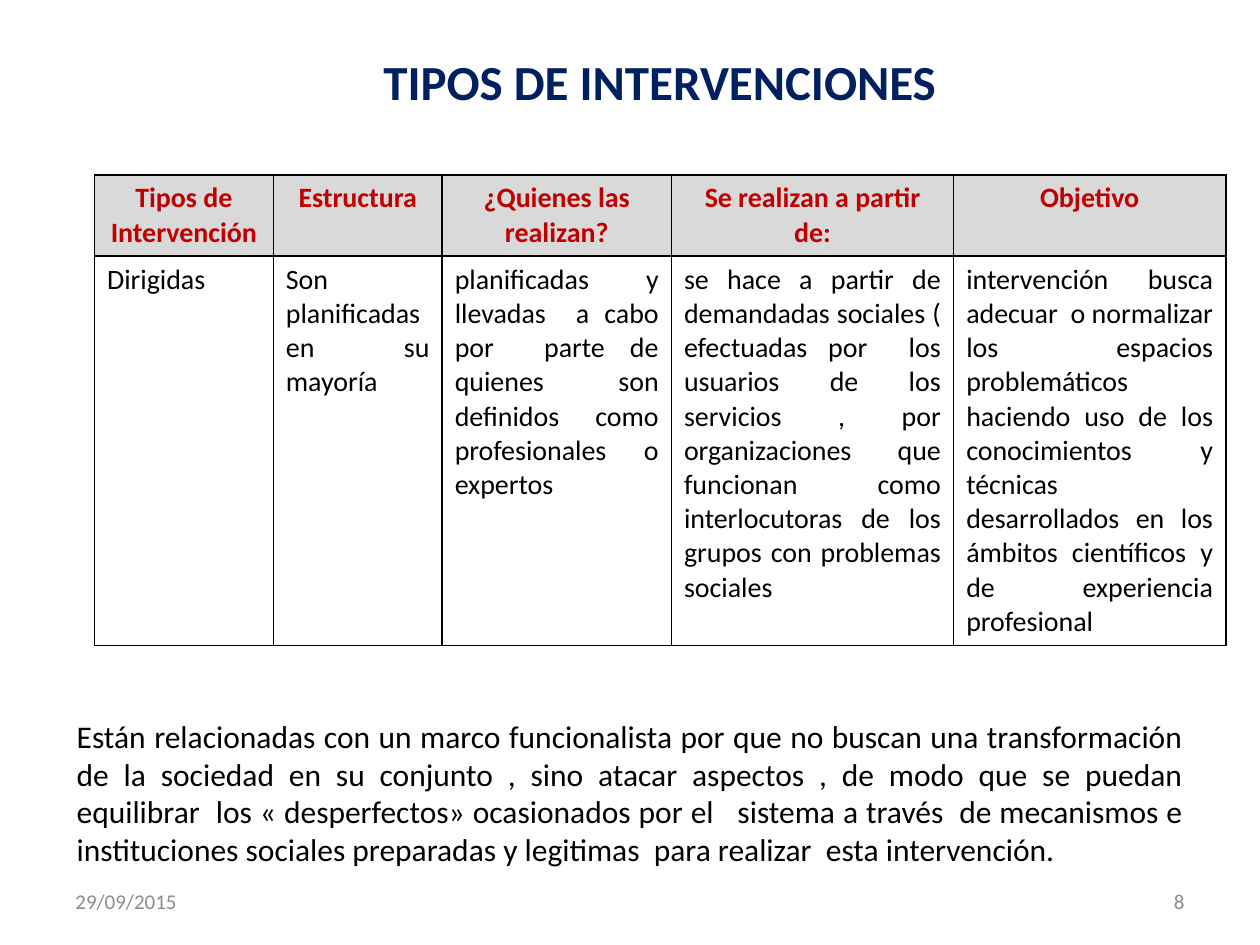
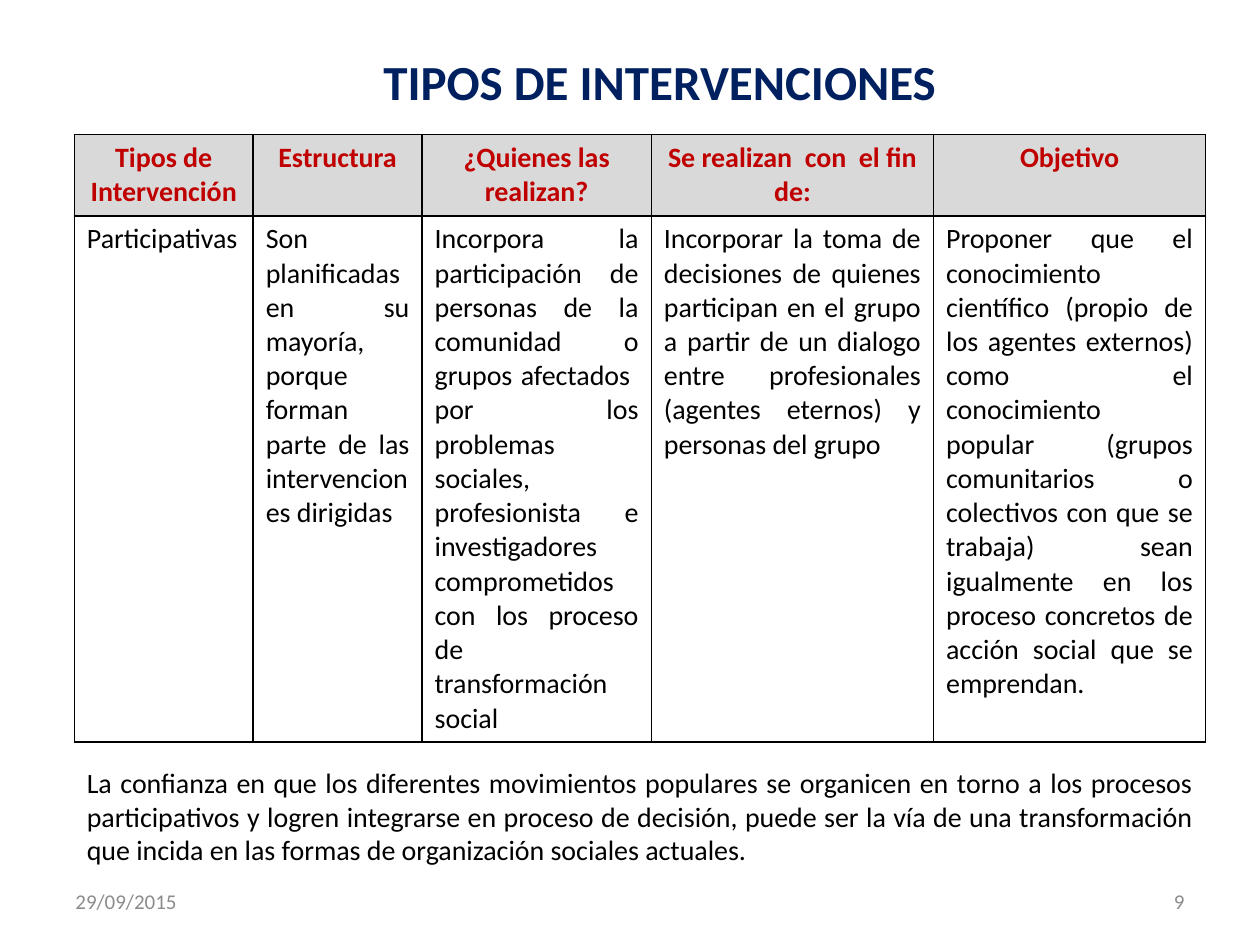
from lxml.etree import SubElement
from pptx import Presentation
from pptx.dml.color import RGBColor
from pptx.enum.text import MSO_ANCHOR, MSO_AUTO_SIZE, PP_ALIGN
from pptx.oxml.ns import qn
from pptx.util import Pt

FONT = "Calibri"
NAVY = RGBColor(0x00, 0x20, 0x60)
RED = RGBColor(0xC0, 0x00, 0x00)
BLACK = RGBColor(0x00, 0x00, 0x00)
FOOTER_GREY = RGBColor(0x8C, 0x8C, 0x8C)
HEADER_GREY = RGBColor(0xD9, 0xD9, 0xD9)

TITLE_ONLY = 5
COLUMN_WIDTHS = (102.2, 96.5, 131, 161.3, 155.5)
HEADER_HEIGHT = 46

# Content that differs from slide to slide
SLIDES = [
    {
        "number": 8,
        "table_at": (54, 100),
        "row_height": 222.5,
        "purpose": "Se realizan a partir de:",
        "row": (
            "Dirigidas",
            "Son planificadas en su mayoría",
            "planificadas y llevadas  a cabo por  parte de quienes son definidos "
            "como profesionales o expertos",
            "se hace a partir de demandadas sociales ( efectuadas por  los usuarios "
            "de los servicios , por organizaciones  que funcionan como "
            "interlocutoras de los grupos con problemas sociales",
            "intervención busca adecuar  o normalizar los espacios problemáticos "
            "haciendo uso de los conocimientos y técnicas desarrollados en los "
            "ámbitos científicos y de experiencia profesional",
        ),
        "note": "Están relacionadas con un marco funcionalista por que no buscan una "
                "transformación de la sociedad en su conjunto , sino atacar aspectos , "
                "de modo que se puedan equilibrar  los « desperfectos» ocasionados por "
                "el   sistema a través  de mecanismos e instituciones sociales "
                "preparadas y legitimas  para realizar  esta intervención.",
        "note_at": (36.7, 406, 646.5, 94.3),
        "note_size": 18,
    },
    {
        "number": 9,
        "table_at": (42.5, 77),
        "row_height": 300.5,
        "purpose": "Se realizan  con  el fin de:",
        "row": (
            "Participativas",
            "Son planificadas en su mayoría, porque forman parte de las "
            "intervenciones dirigidas",
            "Incorpora la participación de personas de la comunidad o grupos "
            "afectados  por los problemas sociales, profesionista e investigadores "
            "comprometidos con los proceso de transformación social",
            "Incorporar la toma de decisiones de quienes participan en el grupo a "
            "partir de un dialogo entre profesionales (agentes eternos) y personas "
            "del grupo",
            "Proponer que el conocimiento científico (propio de los agentes "
            "externos) como el conocimiento popular (grupos comunitarios o "
            "colectivos con que se trabaja) sean igualmente en los proceso "
            "concretos de acción social que se emprendan.",
        ),
        "note": "La confianza en que los diferentes movimientos populares se organicen "
                "en torno a los procesos participativos y logren integrarse en proceso "
                "de decisión, puede ser la vía de una transformación que incida en las "
                "formas de organización sociales actuales.",
        "note_at": (42.5, 434, 646.5, 65.5),
        "note_size": 16,
    },
]


class SlideBuilder:
    """Holds the deck, its style and the current page."""

    def __init__(self):
        self.deck = Presentation()
        self.deck.slide_width, self.deck.slide_height = Pt(720), Pt(540)
        self.page = None

    def new_page(self):
        self.page = self.deck.slides.add_slide(self.deck.slide_layouts[TITLE_ONLY])

    def fill_text(self, frame, text, size, color, align, bold=False):
        frame.word_wrap = True
        para = frame.paragraphs[0]
        para.text = text
        para.alignment = align
        para.font.name = FONT
        para.font.size = Pt(size)
        para.font.bold = bold
        para.font.color.rgb = color

    def title(self, text):
        box = self.page.shapes.title
        box.left, box.top, box.width, box.height = Pt(184.3), Pt(26), Pt(385.2), Pt(41)
        box.text_frame.auto_size = MSO_AUTO_SIZE.NONE
        self.fill_text(box.text_frame, text, 28, NAVY, PP_ALIGN.CENTER, bold=True)

    def text(self, content, at, size, color, align, anchor=MSO_ANCHOR.TOP):
        box = self.page.shapes.add_textbox(*map(Pt, at))
        box.text_frame.vertical_anchor = anchor
        self.fill_text(box.text_frame, content, size, color, align)

    def table(self, header, row, at, row_height):
        heights = (HEADER_HEIGHT, row_height)
        frame = self.page.shapes.add_table(
            2, len(header), *map(Pt, at), Pt(sum(COLUMN_WIDTHS)), Pt(sum(heights)))
        table = frame.table
        for column, width in zip(table.columns, COLUMN_WIDTHS):
            column.width = Pt(width)
        for table_row, height in zip(table.rows, heights):
            table_row.height = Pt(height)
        for index, (heading, body) in enumerate(zip(header, row)):
            top, bottom = table.cell(0, index), table.cell(1, index)
            self.fill_text(top.text_frame, heading, 16, RED, PP_ALIGN.CENTER, bold=True)
            self.fill_text(bottom.text_frame, body, 16, BLACK, PP_ALIGN.JUSTIFY)
            self.borders(top)
            self.borders(bottom)
            top.fill.solid()
            top.fill.fore_color.rgb = HEADER_GREY
            bottom.fill.background()

    def borders(self, cell):
        properties = cell._tc.get_or_add_tcPr()
        for side in ("a:lnL", "a:lnR", "a:lnT", "a:lnB"):
            line = SubElement(properties, qn(side), w=str(Pt(1)))
            fill = SubElement(line, qn("a:solidFill"))
            SubElement(fill, qn("a:srgbClr"), val=str(BLACK))

    def footer(self, date, number):
        for content, left, align in ((date, 36, PP_ALIGN.LEFT),
                                     (str(number), 516, PP_ALIGN.RIGHT)):
            self.text(content, (left, 500.5, 168, 28.75), 12, FOOTER_GREY, align,
                      MSO_ANCHOR.MIDDLE)


def main():
    builder = SlideBuilder()
    for content in SLIDES:
        builder.new_page()
        builder.title("TIPOS DE INTERVENCIONES")

        # Comparison table
        header = ("Tipos de Intervención", "Estructura", "¿Quienes las realizan?",
                  content["purpose"], "Objetivo")
        builder.table(header, content["row"], content["table_at"], content["row_height"])

        # Closing remark and footer
        builder.text(content["note"], content["note_at"], content["note_size"],
                     BLACK, PP_ALIGN.JUSTIFY)
        builder.footer("29/09/2015", content["number"])
    builder.deck.save("out.pptx")


if __name__ == "__main__":
    main()
